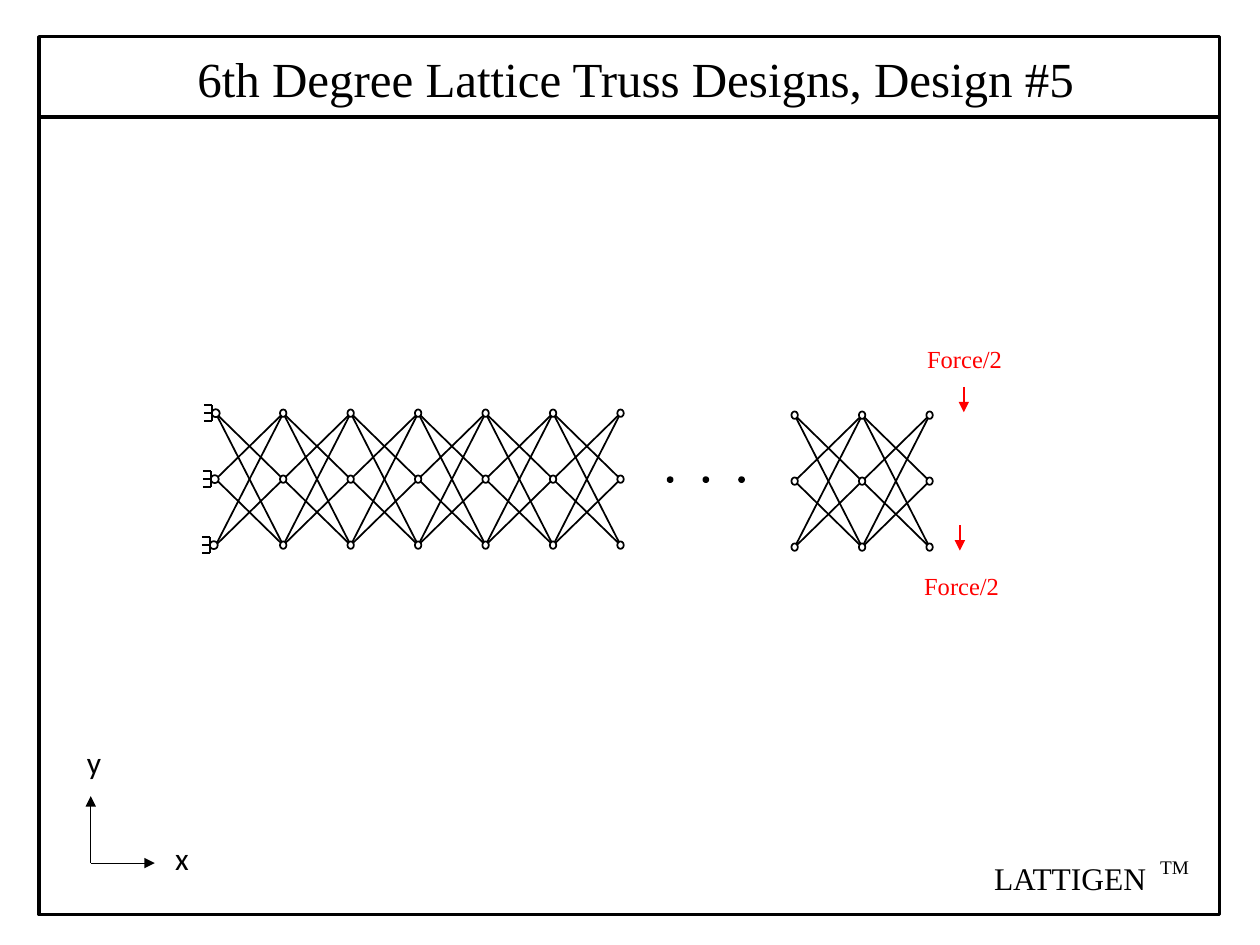
from itertools import product

from lxml import etree
from pptx import Presentation
from pptx.dml.color import RGBColor
from pptx.enum.shapes import MSO_CONNECTOR as CONN, MSO_SHAPE as SHAPE
from pptx.enum.text import MSO_AUTO_SIZE as AUTO
from pptx.oxml.ns import qn
from pptx.util import Cm, Pt

BLACK, WHITE, RED = "000000", "FFFFFF", "FF0000"
SERIF, SANS = "Times New Roman", "Calibri"
COL_GAP, ROW_GAP = 1.36, 1.33
ROWS = range(3)


def rgb(value):
    return RGBColor.from_string(value)


class Canvas:
    def __init__(self, prs):
        self.s = prs.slides.add_slide(prs.slide_layouts[6])
        self.shapes = self.s.shapes

    def group(self):
        """Collect the following elements in a new group."""
        self.shapes = self.s.shapes.add_group_shape().shapes

    def ungroup(self):
        self.shapes = self.s.shapes

    def shape(self, kind, x, y, w, h, fill=None, width=1):
        sp = self.shapes.add_shape(kind, Cm(x), Cm(y), Cm(w), Cm(h))
        sp.shadow.inherit = False
        if fill:
            sp.fill.solid()
            sp.fill.fore_color.rgb = rgb(fill)
        else:
            sp.fill.background()
        sp.line.color.rgb = rgb(BLACK)
        sp.line.width = Pt(width)

    def dot(self, x, y, w, h, fill=WHITE):
        self.shape(SHAPE.OVAL, x - w / 2, y - h / 2, w, h, fill)

    def line(self, x1, y1, x2, y2, color=BLACK, width=1, arrow=False):
        c = self.shapes.add_connector(CONN.STRAIGHT, Cm(x1), Cm(y1), Cm(x2), Cm(y2))
        c.line.color.rgb = rgb(color)
        c.line.width = Pt(width)
        if arrow:
            etree.SubElement(c.line._get_or_add_ln(), qn("a:tailEnd"), type="triangle")
        etree.SubElement(c._element.spPr, qn("a:effectLst"))

    def text(self, x, y, w, h, text, size, font=SERIF, color=BLACK):
        tf = self.shapes.add_textbox(Cm(x), Cm(y), Cm(w), Cm(h)).text_frame
        tf.word_wrap = True
        tf.auto_size = AUTO.SHAPE_TO_FIT_TEXT
        tf.text = text
        p = tf.paragraphs[0]
        self.style(p.runs[0], size, font, color)
        return p

    def style(self, r, size, font, color=BLACK):
        r.font.size = Pt(size)
        r.font.name = font
        r.font.color.rgb = rgb(color)

    def truss(self, x, y, columns, first_node=0):
        """Join each node to the nodes of the other rows in the next column."""
        for col, a, b in product(range(columns - 1), ROWS, ROWS):
            if a != b:
                left = x + col * COL_GAP
                self.line(left, y + a * ROW_GAP, left + COL_GAP, y + b * ROW_GAP)
        for row, col in product(ROWS, range(first_node, columns)):
            self.dot(x + col * COL_GAP, y + row * ROW_GAP, 0.13, 0.15)

    def support(self, x, y):
        self.dot(x, y, 0.16, 0.16)
        bar = x - 0.08
        self.line(bar, y - 0.16, bar, y + 0.16)
        for dy in (-0.16, 0, 0.16):
            self.line(bar - 0.16, y + dy, bar, y + dy)


def main():
    prs = Presentation()
    prs.slide_width, prs.slide_height = Cm(25.4), Cm(19.05)
    c = Canvas(prs)

    # Frame and title
    c.shape(SHAPE.RECTANGLE, 0.79, 0.74, 23.8, 17.7, width=2)
    c.line(0.79, 2.36, 24.59, 2.36, width=2)
    c.text(3.73, 0.86, 18.31, 1.45, "6th Degree Lattice Truss Designs, Design #5", 28)

    # Truss with its supports, gap dots and free end
    c.group()
    c.truss(4.35, 8.33, 7, first_node=1)
    for row in ROWS:
        c.support(4.35 - 0.02 * row, 8.33 + row * ROW_GAP)
    c.truss(16.02, 8.37, 3)
    for i in range(3):
        c.dot(13.51 + 0.72 * i, 9.67, 0.1, 0.1, BLACK)
    c.ungroup()

    # Forces
    c.line(19.43, 7.8, 19.43, 8.31, RED, arrow=True)
    c.line(19.35, 10.59, 19.35, 11.1, RED, arrow=True)
    c.text(18.44, 6.81, 2.1, 0.86, "Force/2", 14, color=RED)
    c.text(18.38, 11.38, 2.34, 0.86, "Force/2", 14, color=RED)

    # Axes
    c.group()
    c.line(1.83, 17.4, 3.12, 17.4, width=0.5, arrow=True)
    c.text(3.28, 16.79, 0.79, 1.02, "x", 18, SANS)
    c.line(1.83, 17.4, 1.83, 16.05, width=0.5, arrow=True)
    c.text(1.5, 14.86, 0.79, 1.02, "y", 18, SANS)

    # Trade name
    c.group()
    c.text(19.79, 17.2, 3.86, 1.02, "LATTIGEN", 18)
    p = c.text(23.14, 16.87, 1.3, 1.02, "TM", 11)
    r = p.add_run()
    r.text = " "
    c.style(r, 18, SANS)

    prs.save("out.pptx")


if __name__ == "__main__":
    main()
